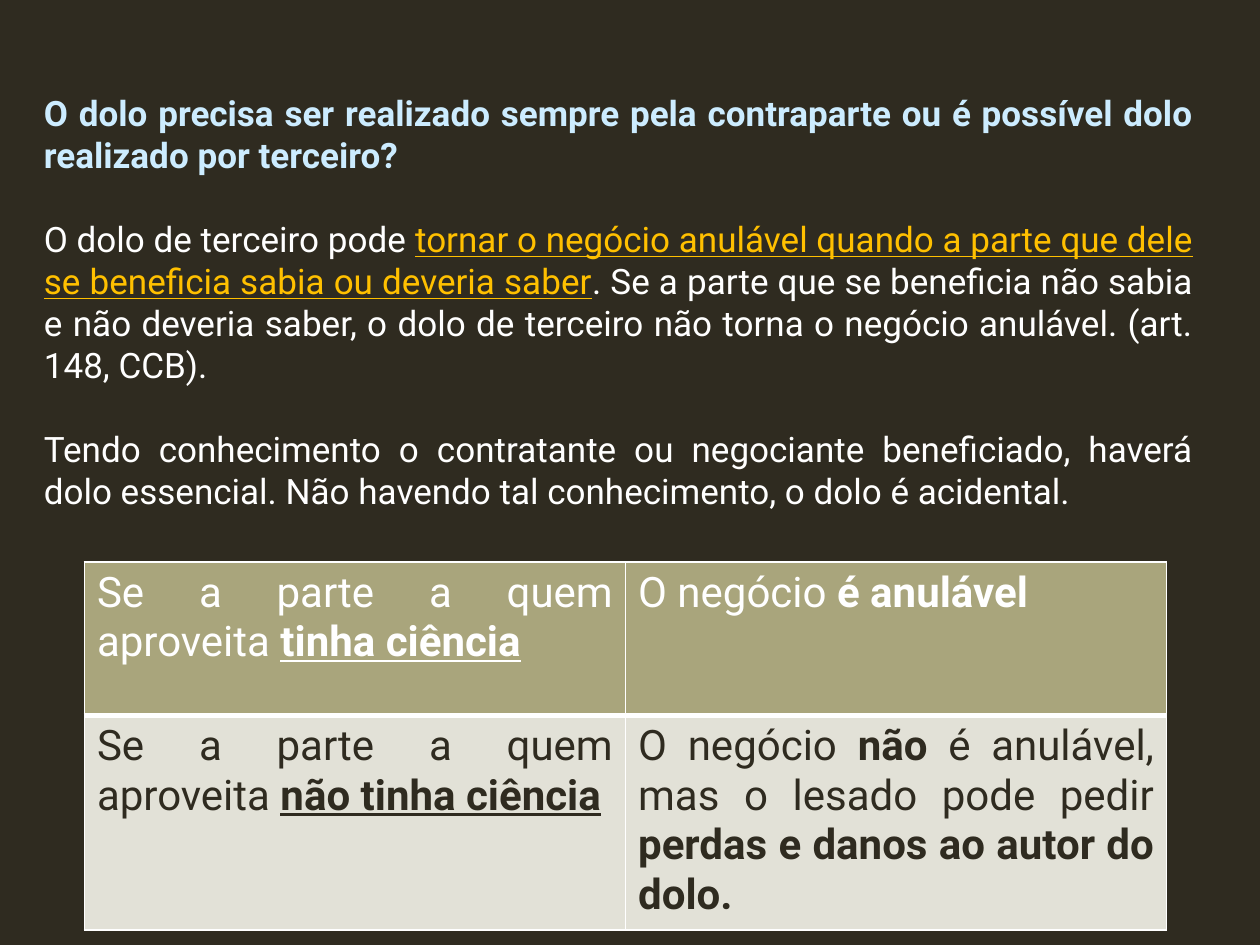
import dataclasses

import lxml.etree
import pptx
import pptx.dml.color
import pptx.enum.text
import pptx.oxml.ns
import pptx.util

Inches = pptx.util.Inches
Pt = pptx.util.Pt


@dataclasses.dataclass(frozen=True)
class Theme:
    font: str = "Roboto"
    background: str = "2F2B20"
    dark: str = "2F2B20"
    light: str = "FFFFFF"
    question: str = "CCECFF"
    highlight: str = "FFC000"
    header_fill: str = "A9A57C"
    body_fill: str = "E2E1D7"
    text_size: int = 20
    table_size: int = 24
    thin: int = 1
    thick: int = 3


THEME = Theme()


def rgb(color):
    return pptx.dml.color.RGBColor.from_string(color)


def write_runs(paragraph, segments, size):
    paragraph.alignment = pptx.enum.text.PP_ALIGN.JUSTIFY
    for wording, color, bold, underline in segments:
        run = paragraph.add_run()
        run.text = wording
        run.font.name = THEME.font
        run.font.size = Pt(size)
        run.font.color.rgb = rgb(color)
        run.font.bold = bold
        run.font.underline = underline


def add_explanation(slide, paragraphs):
    explanation = slide.shapes.add_textbox(
        Inches(0.25), Inches(0.68), Inches(9.32), Inches(6.83)
    )
    frame = explanation.text_frame
    frame.word_wrap = True
    for index, segments in enumerate(paragraphs):
        paragraph = frame.add_paragraph() if index else frame.paragraphs[0]
        if index:
            paragraph.space_before = Pt(24)
        write_runs(paragraph, segments, THEME.text_size)


def set_borders(cell, widths):
    properties = cell._tc.get_or_add_tcPr()
    for side, width in widths.items():
        line = lxml.etree.SubElement(
            properties, pptx.oxml.ns.qn(f"a:ln{side}"), w=str(Pt(width))
        )
        fill = lxml.etree.SubElement(line, pptx.oxml.ns.qn("a:solidFill"))
        lxml.etree.SubElement(fill, pptx.oxml.ns.qn("a:srgbClr"), val=THEME.light)


def add_outcomes(slide, rows):
    outcomes = slide.shapes.add_table(
        len(rows), 2, Inches(0.67), Inches(4.46), Inches(8.59), Inches(2.44)
    ).table
    outcomes.first_row = False
    outcomes.horz_banding = False
    fills = (THEME.header_fill, THEME.body_fill)
    edges = (
        dict(L=THEME.thin, R=THEME.thin, T=THEME.thin, B=THEME.thick),
        dict(L=THEME.thin, R=THEME.thin, T=THEME.thick, B=THEME.thin),
    )
    for row_index, row in enumerate(rows):
        for column_index, segments in enumerate(row):
            cell = outcomes.cell(row_index, column_index)
            set_borders(cell, edges[row_index])
            cell.fill.solid()
            cell.fill.fore_color.rgb = rgb(fills[row_index])
            write_runs(cell.text_frame.paragraphs[0], segments, THEME.table_size)


def main():
    deck = pptx.Presentation()
    deck.slide_width = Inches(10)
    deck.slide_height = Inches(7.5)
    slide = deck.slides.add_slide(deck.slide_layouts[6])
    slide.background.fill.solid()
    slide.background.fill.fore_color.rgb = rgb(THEME.background)

    light, dark = THEME.light, THEME.dark
    add_explanation(slide, [
        [("O dolo precisa ser realizado sempre pela contraparte ou é possível "
          "dolo realizado por terceiro?", THEME.question, True, False)],
        [("O dolo de terceiro pode ", light, False, False),
         ("tornar o negócio anulável quando a parte que dele se beneficia "
          "sabia ou deveria saber", THEME.highlight, False, True),
         (". Se a parte que se beneficia não sabia e não deveria saber, o dolo "
          "de terceiro não torna o negócio anulável. (art. 148, CCB).",
          light, False, False)],
        [("Tendo conhecimento o contratante ou negociante beneficiado, haverá "
          "dolo essencial. Não havendo tal conhecimento, o dolo é acidental.",
          light, False, False)],
    ])

    condition = "Se a parte a quem aproveita "
    add_outcomes(slide, [
        [
            [(condition, light, False, False),
             ("tinha ciência", light, True, True)],
            [("O negócio ", light, False, False),
             ("é anulável", light, True, False)],
        ],
        [
            [(condition, dark, False, False),
             ("não tinha ciência", dark, True, True)],
            [("O negócio ", dark, False, False),
             ("não", dark, True, False),
             (" é anulável, mas o lesado pode pedir ", dark, False, False),
             ("perdas e danos ao autor do dolo.", dark, True, False)],
        ],
    ])
    deck.save("out.pptx")


if __name__ == "__main__":
    main()
